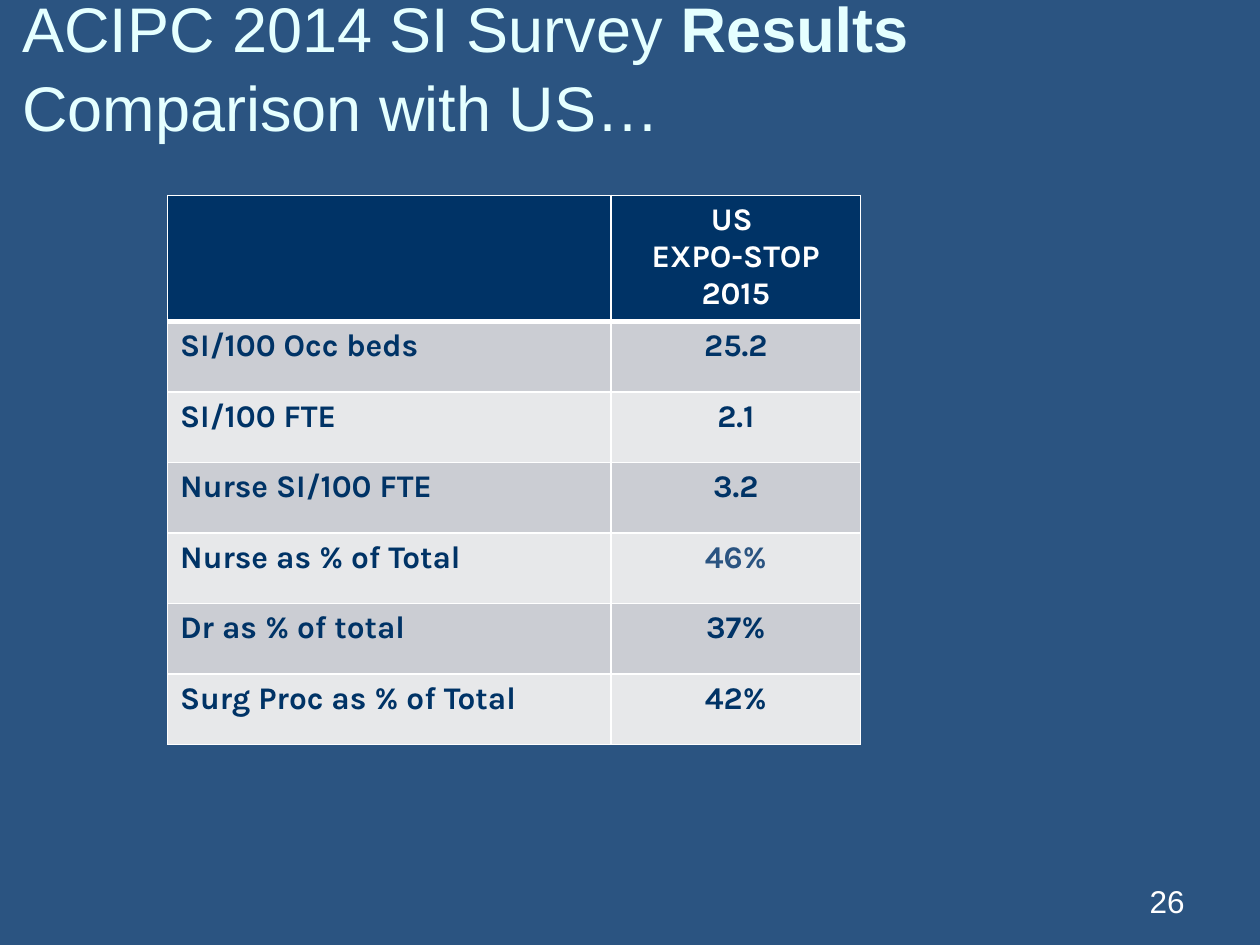
from lxml import etree
from pptx import Presentation
from pptx.dml.color import RGBColor
from pptx.enum.text import MSO_ANCHOR, PP_ALIGN
from pptx.oxml.ns import qn
from pptx.util import Inches, Pt

LEFT, CENTER, RIGHT = PP_ALIGN.LEFT, PP_ALIGN.CENTER, PP_ALIGN.RIGHT
MIDDLE, BOTTOM = MSO_ANCHOR.MIDDLE, MSO_ANCHOR.BOTTOM
COLORS = {
    "background": "2B5481",
    "title": "E5FFFF",
    "navy": "003366",
    "dark band": "CBCDD3",
    "light band": "E7E8EA",
    "white": "FFFFFF",
}
TITLE_FONT = {"name": "Arial", "size": Pt(36), "bold": False}
TABLE_FONT = {"name": "Karla", "size": Pt(18), "bold": True}
NUMBER_FONT = {"name": "Arial", "size": Pt(18)}

ROWS = [
    ("", "US \nEXPO-STOP 2015"),
    ("SI/100 Occ beds", "25.2"),
    ("SI/100 FTE", "2.1"),
    ("Nurse SI/100 FTE", "3.2"),
    ("Nurse as % of Total", "46%"),
    ("Dr as % of total", "37%"),
    ("Surg Proc as % of Total", "42%"),
]
COLUMN_WIDTHS = (3.52, 1.98)
HEADER_HEIGHT, ROW_HEIGHT = 0.98, 0.56


def style_font(font, values, color):
    for name, value in values.items():
        setattr(font, name, value)
    font.color.rgb = RGBColor.from_string(COLORS[color])


def add_border(cell, side, points):
    """Draw a white line on one side (L, R, T or B) of a table cell."""
    properties = cell._tc.get_or_add_tcPr()
    line = etree.SubElement(properties, qn(f"a:ln{side}"), w=str(Pt(points)))
    fill = etree.SubElement(line, qn("a:solidFill"))
    etree.SubElement(fill, qn("a:srgbClr"), val=COLORS["white"])


deck = Presentation()
deck.slide_width, deck.slide_height = Inches(10), Inches(7.5)
page = deck.slides.add_slide(deck.slide_layouts[6])
page.background.fill.solid()
page.background.fill.fore_color.rgb = RGBColor.from_string(COLORS["background"])

# Title, raised by a deep bottom margin
title = page.shapes.add_textbox(Inches(0.08), Inches(0.08), Inches(9.83), Inches(1.33))
frame = title.text_frame
frame.word_wrap = True
frame.vertical_anchor = MIDDLE
frame.margin_bottom = Inches(0.51)
para = frame.paragraphs[0]
para.line_spacing = 1.05
for text, bold in (("ACIPC 2014 SI Survey ", False), ("Results", True), ("Comparison with US…", False)):
    if text.startswith("Comparison"):
        para.add_line_break()
    span = para.add_run()
    span.text = text
    style_font(span.font, {**TITLE_FONT, "bold": bold}, "title")

# Survey table
table = page.shapes.add_table(
    len(ROWS), len(COLUMN_WIDTHS), Inches(1.33), Inches(1.55),
    Inches(sum(COLUMN_WIDTHS)), Inches(HEADER_HEIGHT + ROW_HEIGHT * (len(ROWS) - 1)),
).table
for column, width in zip(table.columns, COLUMN_WIDTHS):
    column.width = Inches(width)

for row_index, values in enumerate(ROWS):
    is_header = row_index == 0
    table.rows[row_index].height = Inches(HEADER_HEIGHT if is_header else ROW_HEIGHT)
    band = "navy" if is_header else "dark band" if row_index % 2 else "light band"
    for column_index, value in enumerate(values):
        cell = table.cell(row_index, column_index)
        for side in "LRTB":
            under_header = (row_index, side) in ((0, "B"), (1, "T"))
            add_border(cell, side, 3 if under_header else 1)
        cell.fill.solid()
        cell.fill.fore_color.rgb = RGBColor.from_string(COLORS[band])
        cell.text = value
        color = "white" if is_header else "background" if value == "46%" else "navy"
        for para in cell.text_frame.paragraphs:
            para.alignment = CENTER if column_index else LEFT
            style_font(para.font, TABLE_FONT, color)
            for span in para.runs:
                style_font(span.font, TABLE_FONT, color)

# Page number
number = page.shapes.add_textbox(Inches(7.17), Inches(6.83), Inches(2.33), Inches(0.52))
number.text_frame.word_wrap = True
number.text_frame.vertical_anchor = BOTTOM
para = number.text_frame.paragraphs[0]
para.alignment = RIGHT
span = para.add_run()
span.text = "26"
style_font(span.font, NUMBER_FONT, "white")

deck.save("out.pptx")
